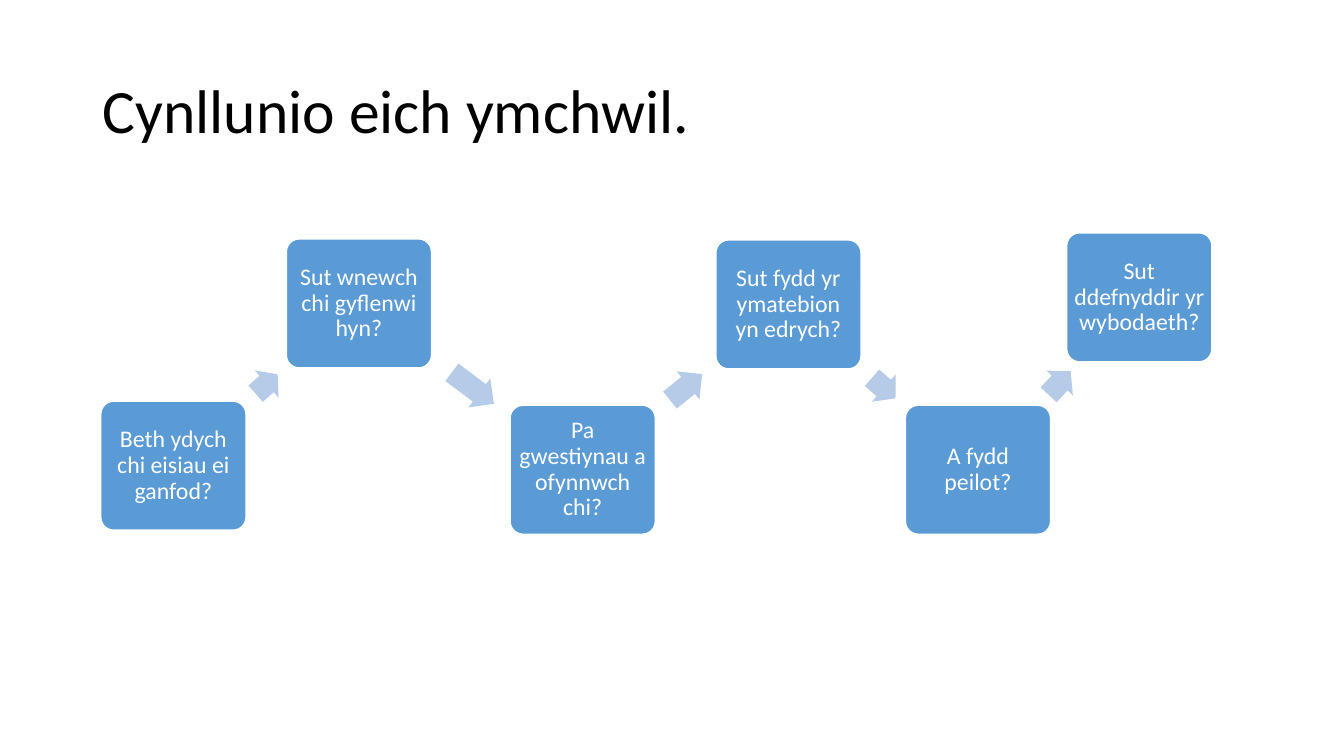
from dataclasses import dataclass

from pptx import Presentation
from pptx.dml.color import RGBColor
from pptx.enum.shapes import MSO_SHAPE
from pptx.enum.text import MSO_ANCHOR, PP_ALIGN
from pptx.util import Emu, Pt

ROUNDED = MSO_SHAPE.ROUNDED_RECTANGLE
ARROW = MSO_SHAPE.RIGHT_ARROW
MIDDLE = MSO_ANCHOR.MIDDLE
LEFT, CENTER = PP_ALIGN.LEFT, PP_ALIGN.CENTER

PX = 9144  # 100 px to the inch


@dataclass(frozen=True)
class Theme:
    font: str = "Calibri"
    title_color: RGBColor = RGBColor(0, 0, 0)
    white: RGBColor = RGBColor(255, 255, 255)
    step_fill: RGBColor = RGBColor(0x5B, 0x9B, 0xD5)
    arrow_fill: RGBColor = RGBColor(0xB5, 0xCB, 0xE7)
    title_size: int = 44
    step_size: int = 17


THEME = Theme()
TITLE = "Cynllunio eich ymchwil."
TITLE_BOX = (92, 40, 1150, 145)
FLOW_BOX = (100, 231, 1102, 299)
STEP_WIDTH, STEP_HEIGHT = 144, 128
ARROW_HEIGHT = 36

# Left and top within the flow, wording
STEPS = [
    (0, 167, "Beth ydych chi eisiau ei ganfod?"),
    (184, 6, "Sut wnewch chi gyflenwi hyn?"),
    (406, 171, "Pa gwestiynau a ofynnwch chi?"),
    (610, 7, "Sut fydd yr ymatebion yn edrych?"),
    (798, 171, "A fydd peilot?"),
    (958, 0, "Sut ddefnyddir yr wybodaeth?"),
]
# Left and top within the flow, length, rotation in degrees
ARROWS = [
    (150, 132, 29, 318.9),
    (343, 136, 52, 36.8),
    (560, 135, 41, 321.1),
    (761, 136, 31, 41.2),
    (935, 131, 32, 313.1),
]


def to_emu(*lengths):
    return [Emu(length * PX) for length in lengths]


def set_attributes(target, values):
    for name, value in values.items():
        setattr(target, name, value)


def write_text(shape, text, size, color, alignment, inset_x, inset_y):
    frame = shape.text_frame
    margin_x, margin_y = to_emu(inset_x, inset_y)
    set_attributes(frame, {
        "word_wrap": True, "vertical_anchor": MIDDLE,
        "margin_left": margin_x, "margin_right": margin_x,
        "margin_top": margin_y, "margin_bottom": margin_y,
    })
    paragraph = frame.paragraphs[0]
    set_attributes(paragraph, {"alignment": alignment, "line_spacing": 0.9})
    run = paragraph.add_run()
    run.text = text
    set_attributes(run.font, {"name": THEME.font, "size": Pt(size)})
    run.font.color.rgb = color


def add_filled_shape(slide, kind, box, color, adjustments):
    shape = slide.shapes.add_shape(kind, *to_emu(*box))
    shape.shadow.inherit = False
    shape.fill.solid()
    shape.fill.fore_color.rgb = color
    for index, value in enumerate(adjustments):
        shape.adjustments[index] = value
    return shape


def add_title(slide, box):
    title = slide.shapes.add_textbox(*to_emu(*box))
    write_text(title, TITLE, THEME.title_size, THEME.title_color, LEFT, 10, 5)


def add_step(slide, box, text):
    step = add_filled_shape(slide, ROUNDED, box, THEME.step_fill, [0.1])
    step.line.color.rgb = THEME.white
    step.line.width = Pt(1)
    write_text(step, text, THEME.step_size, THEME.white, CENTER, 3, 3)


def add_arrow(slide, box, rotation):
    arrow = add_filled_shape(slide, ARROW, box, THEME.arrow_fill, [0.6, 0.5])
    arrow.line.fill.background()
    arrow.rotation = rotation


def add_flow(slide, box):
    left, top = box[:2]
    # Question boxes
    for x, y, text in STEPS:
        add_step(slide, (left + x, top + y, STEP_WIDTH, STEP_HEIGHT), text)
    # Arrows between the questions
    for x, y, length, rotation in ARROWS:
        add_arrow(slide, (left + x, top + y, length, ARROW_HEIGHT), rotation)


def main():
    presentation = Presentation()
    slide_width, slide_height = to_emu(1333, 750)
    set_attributes(presentation, {"slide_width": slide_width, "slide_height": slide_height})
    slide = presentation.slides.add_slide(presentation.slide_layouts[6])
    add_title(slide, TITLE_BOX)
    add_flow(slide, FLOW_BOX)
    presentation.save("out.pptx")


if __name__ == "__main__":
    main()
